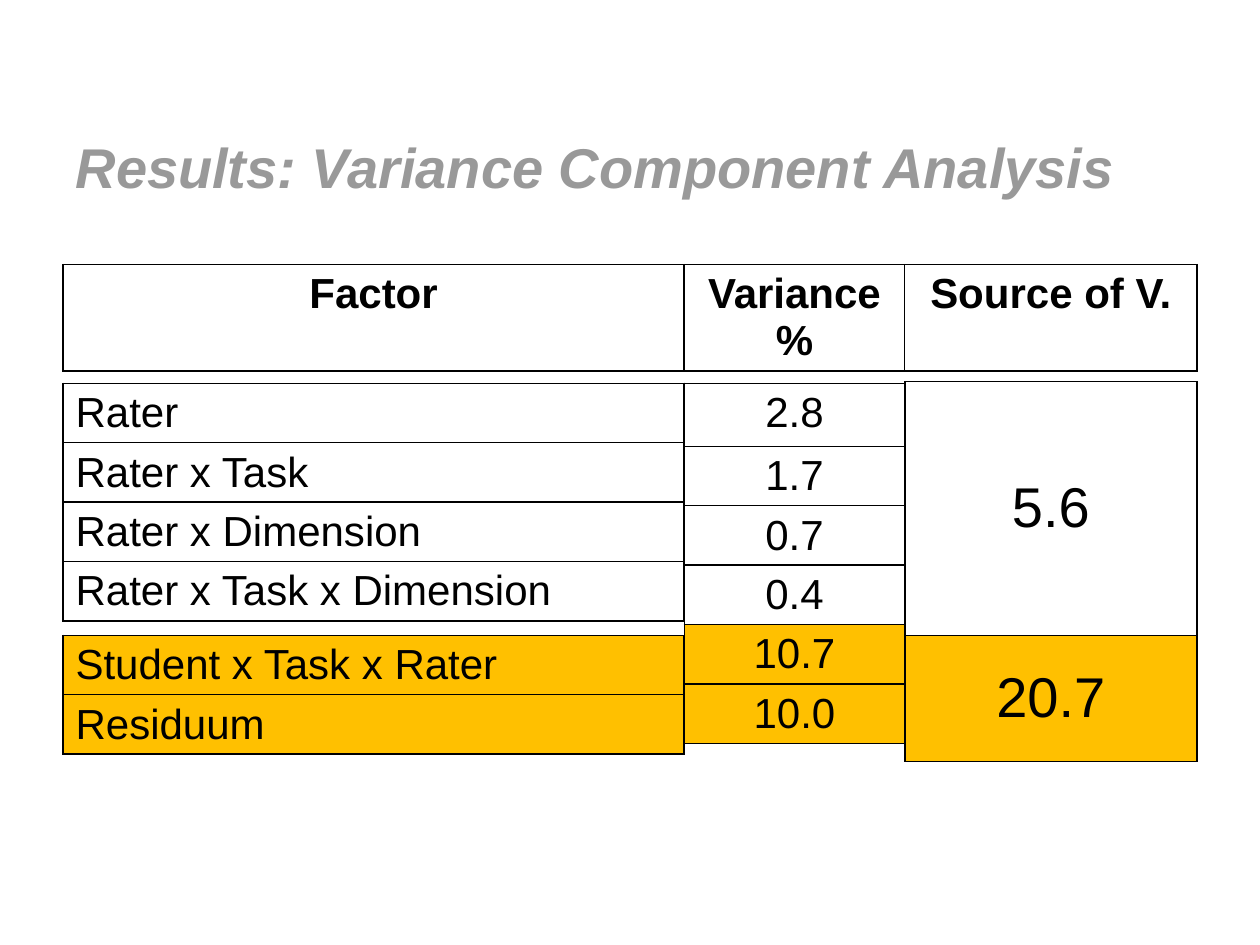
from lxml.etree import SubElement as Sub
from pptx import Presentation
from pptx.dml.color import RGBColor as Rgb
from pptx.enum.text import MSO_ANCHOR as Anchor, PP_ALIGN as Align
from pptx.oxml.ns import qn
from pptx.util import Pt

HUES = {"title": "999999", "ink": "000000", "plain": "FFFFFF", "mark": "FFC000"}
TITLE = "Results: Variance Component Analysis"
LEFT = 36
WIDTHS = [355, 126, 167]
HEAD = ["Factor", "Variance %", "Source of V."]
RATER = ["Rater", "Rater x Task", "Rater x Dimension", "Rater x Task x Dimension"]
REST = ["Student x Task x Rater", "Residuum"]
SHARES = ["2.8", "1.7", "0.7", "0.4", "10.7", "10.0"]
SUMS = ["5.6", "20.7"]
EDGES = [LEFT + sum(WIDTHS[:i]) for i in range(len(WIDTHS))]

TABLES = [
    dict(col=0, top=151.2, rows=[HEAD], highs=[29.5], bold=True),
    dict(col=0, top=219, rows=[[t] for t in RATER], highs=[34] * 4, align=Align.LEFT),
    dict(col=0, top=363, rows=[[t] for t in REST], highs=[34] * 2, align=Align.LEFT, marks=2),
    dict(col=1, top=219, rows=[[t] for t in SHARES], highs=[36] + [34] * 5, marks=2),
    dict(col=2, top=218, rows=[[t] for t in SUMS], highs=[145, 72], size=32,
         anchor=Anchor.MIDDLE, marks=1),
]


def write(para, text, size, hue, bold=False, italic=False):
    run = para.add_run()
    run.text = text
    font = run.font
    font.name, font.size, font.bold, font.italic = "Arial", Pt(size), bold, italic
    font.color.rgb = Rgb.from_string(HUES[hue])


def frame(cell):
    props = cell._tc.get_or_add_tcPr()
    for side in ("a:lnL", "a:lnR", "a:lnT", "a:lnB"):
        line = Sub(props, qn(side), w=str(Pt(1)))
        Sub(Sub(line, qn("a:solidFill")), qn("a:srgbClr"), val=HUES["ink"])


def draw(slide, col, top, rows, highs, size=24, bold=False,
         align=Align.CENTER, anchor=Anchor.TOP, marks=0):
    wides = WIDTHS[col:col + len(rows[0])]
    shape = slide.shapes.add_table(len(rows), len(wides), Pt(EDGES[col]), Pt(top),
                                   Pt(sum(wides)), Pt(sum(highs)))
    table = shape.table
    table.first_row = table.horz_banding = False
    for part, wide in zip(table.columns, wides):
        part.width = Pt(wide)
    for r, (texts, high) in enumerate(zip(rows, highs)):
        table.rows[r].height = Pt(high)
        hue = "mark" if r >= len(rows) - marks else "plain"
        for c, text in enumerate(texts):
            cell = table.cell(r, c)
            frame(cell)
            cell.fill.solid()
            cell.fill.fore_color.rgb = Rgb.from_string(HUES[hue])
            cell.vertical_anchor = anchor
            para = cell.text_frame.paragraphs[0]
            para.alignment = align
            write(para, text, size, "ink", bold)


def main():
    """Build the variance component slide."""
    deck = Presentation()
    deck.slide_width, deck.slide_height = Pt(720), Pt(540)
    slide = deck.slides.add_slide(deck.slide_layouts[5])
    title = slide.shapes.title
    title.left, title.top, title.width, title.height = Pt(LEFT), Pt(58.3), Pt(648), Pt(72.7)
    title.text_frame.vertical_anchor = Anchor.MIDDLE
    para = title.text_frame.paragraphs[0]
    para.alignment = Align.LEFT
    write(para, TITLE, 32, "title", True, True)
    for item in TABLES:
        draw(slide, **item)
    deck.save("out.pptx")


if __name__ == "__main__":
    main()
